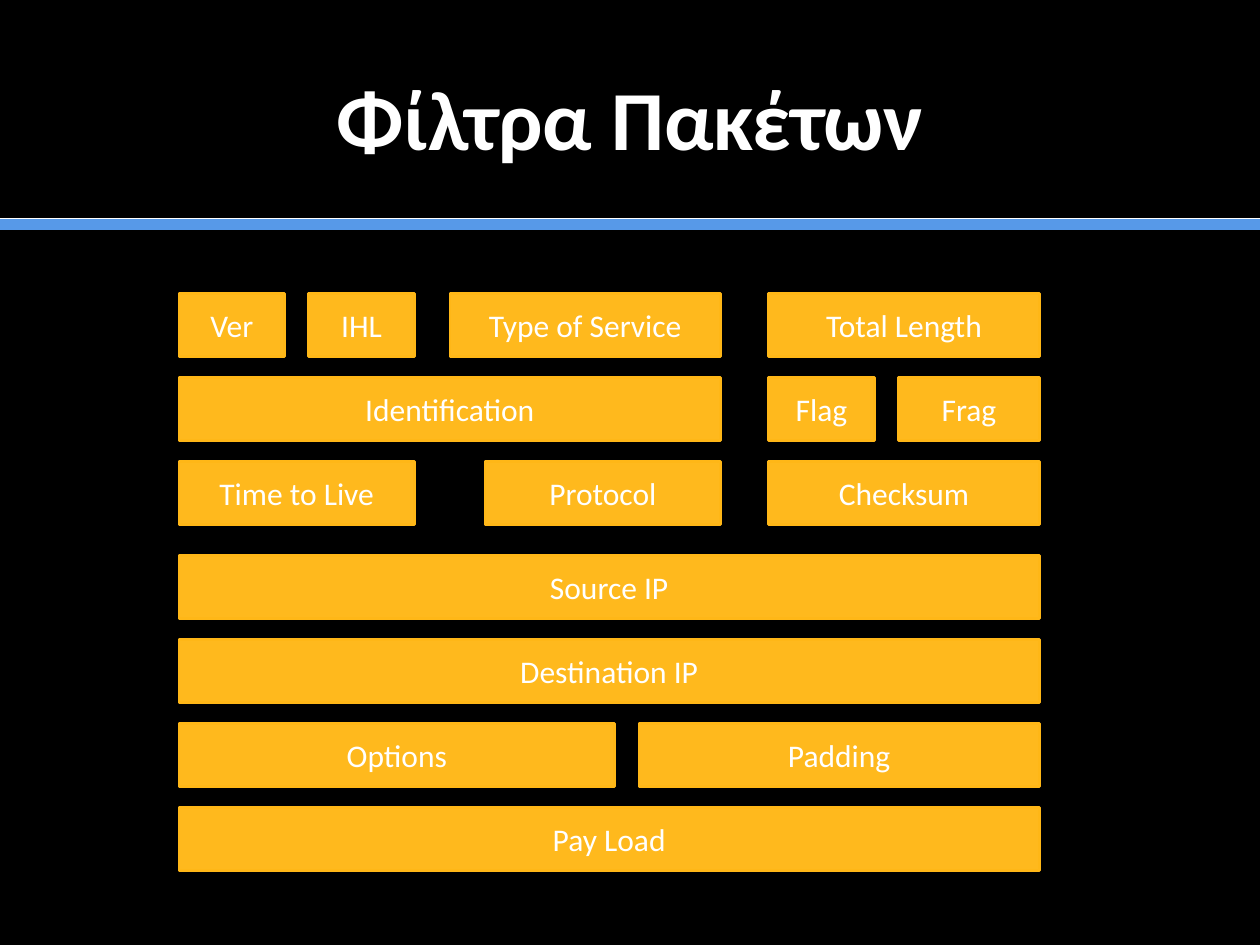
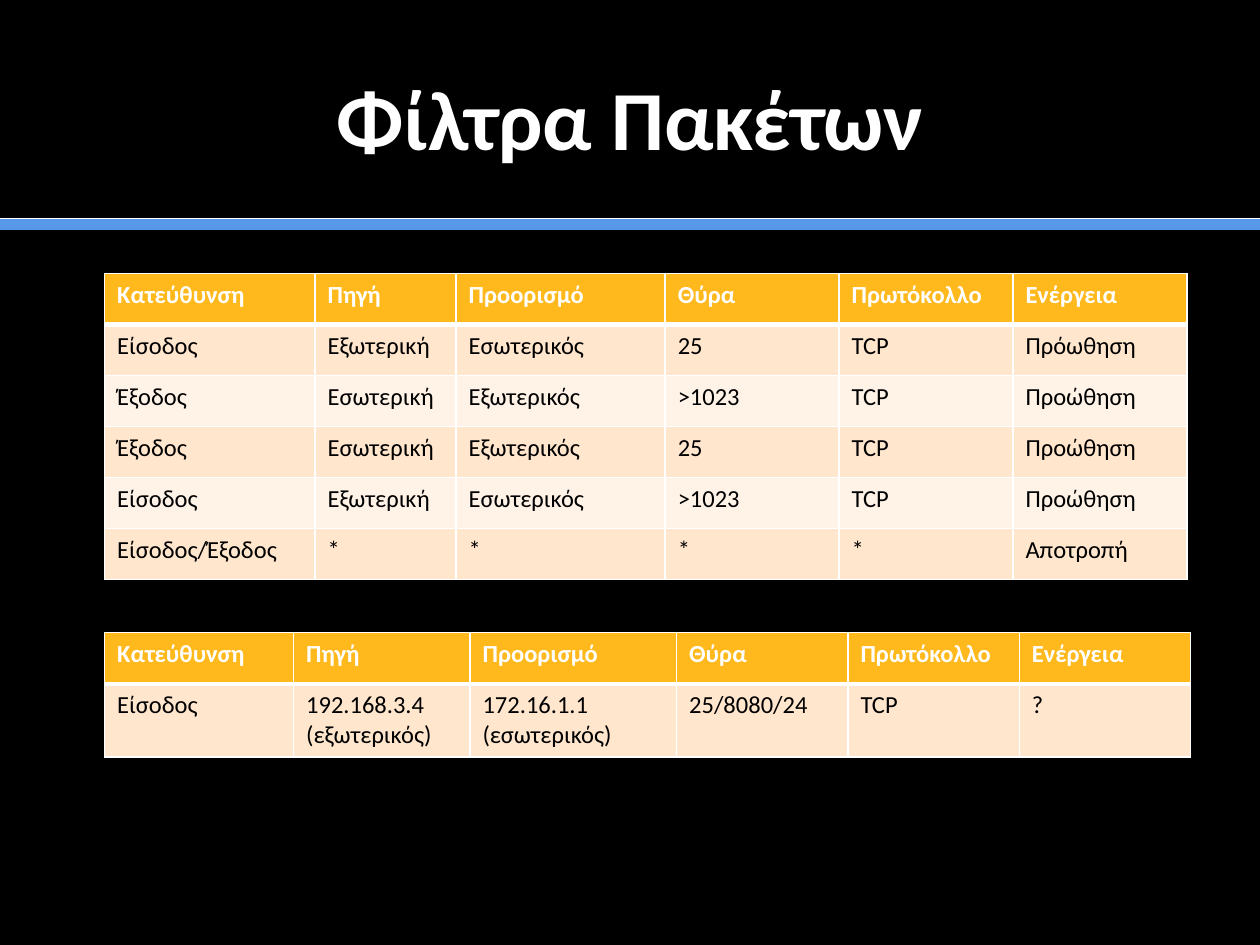
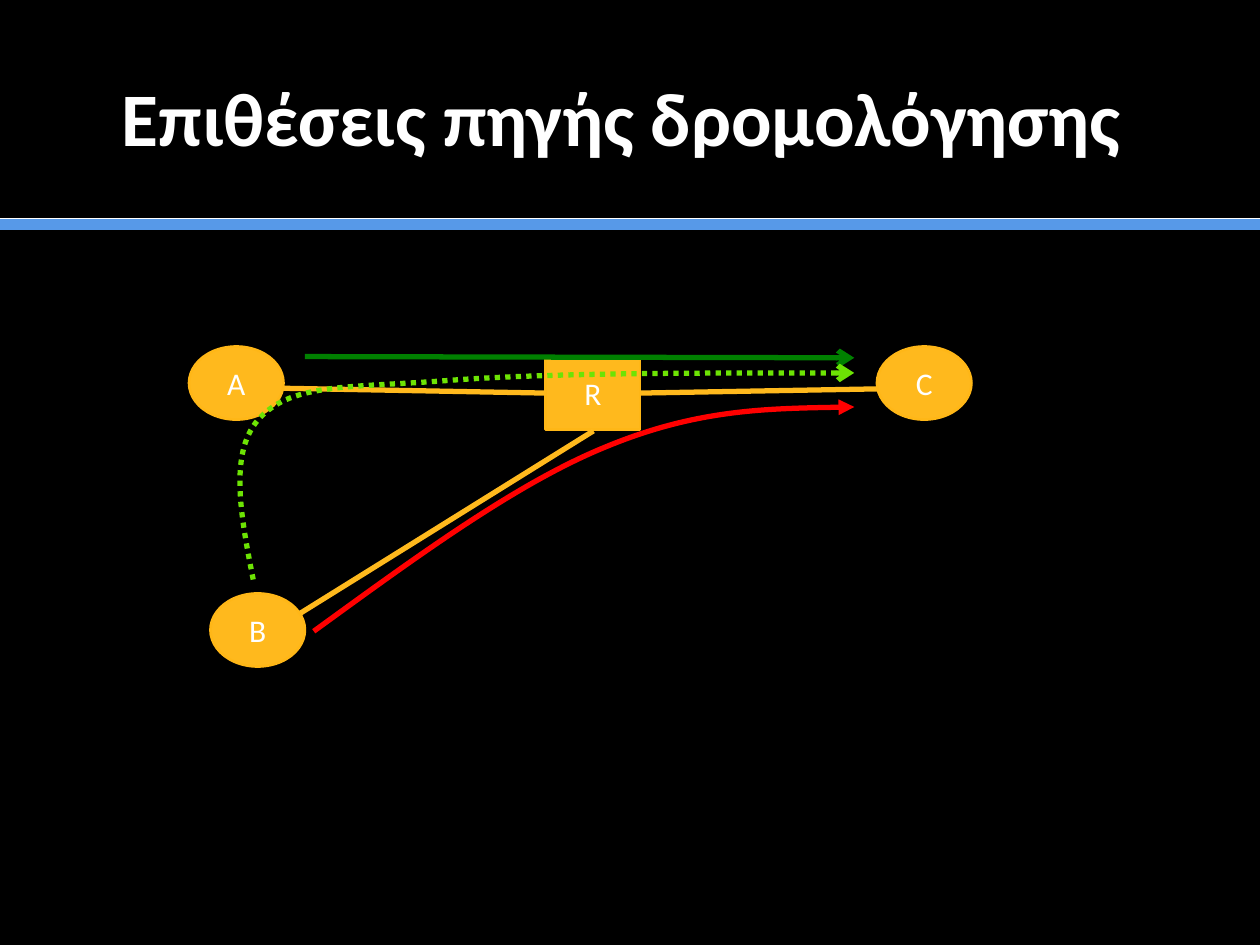
from dataclasses import dataclass

from pptx import Presentation
from pptx.dml.color import RGBColor
from pptx.enum.dml import MSO_LINE
from pptx.enum.shapes import MSO_CONNECTOR, MSO_SHAPE
from pptx.enum.text import MSO_ANCHOR, MSO_AUTO_SIZE, PP_ALIGN
from pptx.oxml.ns import qn
from pptx.oxml.xmlchemy import OxmlElement
from pptx.util import Inches, Pt


@dataclass(frozen=True)
class Theme:
    font: str = "Calibri"
    background: str = "000000"
    light: str = "FFFFFF"
    dark: str = "000000"
    band: str = "5799E8"
    accent: str = "FFB91D"
    outline: str = "FFB717"
    row_odd: str = "FFE6CD"
    row_even: str = "FFF3E8"
    direct_route: str = "008000"
    spoofed_route: str = "6DE304"
    attack_route: str = "FF0000"
    title_size: float = 48
    long_title_size: float = 43.2
    block_size: float = 18
    cell_size: float = 14
    route_width: float = 3


THEME = Theme()
TITLE_ONLY = 5

BLOCK_HEIGHT = 0.5
ROW_PITCH = 2 / 3
FIRST_ROW_TOP = 2.33
ADDRESS_GAP = 0.08
ADDRESS_ROW = 3

# Each header field: label, left edge, right edge.
HEADER_ROWS = [
    [("Ver", 1.42, 2.26), ("IHL", 2.45, 3.29),
     ("Type of Service", 3.57, 5.72), ("Total Length", 6.1, 8.25)],
    [("Identification", 1.42, 5.72), ("Flag", 6.1, 6.94), ("Frag", 7.13, 8.25)],
    [("Time to Live", 1.42, 3.29), ("Protocol", 3.85, 5.72), ("Checksum", 6.1, 8.25)],
    [("Source IP", 1.42, 8.25)],
    [("Destination IP", 1.42, 8.25)],
    [("Options", 1.42, 4.88), ("Padding", 5.07, 8.25)],
    [("Pay Load", 1.42, 8.25)],
]

RULE_HEADINGS = ["Κατεύθυνση", "Πηγή", "Προορισμό", "Θύρα", "Πρωτόκολλο", "Ενέργεια"]
FILTER_RULES = [
    ["Είσοδος", "Εξωτερική", "Εσωτερικός", "25", "TCP", "Πρόωθηση"],
    ["Έξοδος", "Εσωτερική", "Εξωτερικός", ">1023", "TCP", "Προώθηση"],
    ["Έξοδος", "Εσωτερική", "Εξωτερικός", "25", "TCP", "Προώθηση"],
    ["Είσοδος", "Εξωτερική", "Εσωτερικός", ">1023", "TCP", "Προώθηση"],
    ["Είσοδος/Έξοδος", "*", "*", "*", "*", "Αποτροπή"],
]
SAMPLE_PACKET = [
    ["Είσοδος", "192.168.3.4\n(εξωτερικός)", "172.16.1.1\n(εσωτερικός)",
     "25/8080/24", "TCP", "?"],
]


def rgb(color):
    return RGBColor.from_string(color)


def add_text(para, text, size, color, bold=False):
    span = para.add_run()
    span.text = text
    span.font.name = THEME.font
    span.font.size = Pt(size)
    span.font.bold = bold
    span.font.color.rgb = rgb(color)


def style_line(line, color, width):
    line.color.rgb = rgb(color)
    line.width = Pt(width)


def add_arrowhead(shape, kind):
    tail = OxmlElement("a:tailEnd")
    tail.set("type", kind)
    shape.line._get_or_add_ln().append(tail)


def add_line(page, start, end, color, width):
    ends = [Inches(value) for value in (*start, *end)]
    connector = page.shapes.add_connector(MSO_CONNECTOR.STRAIGHT, *ends)
    style_line(connector.line, color, width)
    connector.element.spPr.append(OxmlElement("a:effectLst"))
    return connector


def add_block(shapes, kind, label, left, top, width, height):
    block = shapes.add_shape(kind, Inches(left), Inches(top), Inches(width), Inches(height))
    block.shadow.inherit = False
    block.fill.solid()
    block.fill.fore_color.rgb = rgb(THEME.accent)
    style_line(block.line, THEME.outline, 1.5)
    block.text_frame.vertical_anchor = MSO_ANCHOR.MIDDLE
    para = block.text_frame.paragraphs[0]
    para.alignment = PP_ALIGN.CENTER
    add_text(para, label, THEME.block_size, THEME.light)


def add_curve(page, points, color, arrowhead, dash=None):
    """Draw cubic curves: a start point, then three points for each curve."""
    corners = [(Inches(x), Inches(y)) for x, y in points]
    builder = page.shapes.build_freeform(*corners[0])
    builder.add_line_segments(corners[1:], close=False)
    curve = builder.convert_to_shape()
    segments = list(curve.element.iter(qn("a:lnTo")))
    for first in range(0, len(segments), 3):
        bezier = OxmlElement("a:cubicBezTo")
        segments[first].addprevious(bezier)
        for segment in segments[first:first + 3]:
            bezier.append(segment[0])
            segment.getparent().remove(segment)
    curve.shadow.inherit = False
    curve.fill.background()
    style_line(curve.line, color, THEME.route_width)
    if dash:
        curve.line.dash_style = dash
    add_arrowhead(curve, arrowhead)


def add_border(cell, side, width):
    border = OxmlElement(f"a:ln{side}")
    border.set("w", str(Pt(width)))
    fill = OxmlElement("a:solidFill")
    color = OxmlElement("a:srgbClr")
    color.set("val", THEME.light)
    fill.append(color)
    border.append(fill)
    cell._tc.get_or_add_tcPr().append(border)


def fill_cell(cell, text, row):
    is_heading = row == 0
    widths = {"L": 1, "R": 1, "T": 3 if row == 1 else 1, "B": 3 if is_heading else 1}
    for side, width in widths.items():
        add_border(cell, side, width)
    body_fill = THEME.row_odd if row % 2 else THEME.row_even
    cell.fill.solid()
    cell.fill.fore_color.rgb = rgb(THEME.accent if is_heading else body_fill)
    frame = cell.text_frame
    for index, line in enumerate(text.split("\n")):
        para = frame.add_paragraph() if index else frame.paragraphs[0]
        add_text(para, line, THEME.cell_size,
                 THEME.light if is_heading else THEME.dark, is_heading)


def add_rule_table(page, top, column_widths, row_heights, rules):
    rows = [RULE_HEADINGS, *rules]
    table = page.shapes.add_table(
        len(rows), len(column_widths), Inches(0.83), Inches(top),
        Inches(sum(column_widths)), Inches(sum(row_heights))).table
    for column, width in zip(table.columns, column_widths):
        column.width = Inches(width)
    for row, height in zip(table.rows, row_heights):
        row.height = Inches(height)
    for row, texts in enumerate(rows):
        for column, text in enumerate(texts):
            fill_cell(table.cell(row, column), text, row)


def add_page(deck, title, size=THEME.title_size):
    page = deck.slides.add_slide(deck.slide_layouts[TITLE_ONLY])
    frame = page.shapes.title.text_frame
    frame.auto_size = MSO_AUTO_SIZE.NONE
    frame.vertical_anchor = MSO_ANCHOR.MIDDLE
    para = frame.paragraphs[0]
    para.alignment = PP_ALIGN.CENTER
    add_text(para, title, size, THEME.light, bold=True)
    return page


def set_up_layout(deck):
    background = deck.slide_master.background.fill
    background.solid()
    background.fore_color.rgb = rgb(THEME.background)
    title = deck.slide_layouts[TITLE_ONLY].placeholders[0]
    title.left, title.top = Inches(0.5), Inches(0.3)
    title.width, title.height = Inches(9), Inches(1.25)


def move_band_to_layout(page):
    """Draw the title band on a page, then hand it to the layout all pages share."""
    for height, color, width in ((1.78, THEME.band, 7), (1.73, THEME.light, 0.5)):
        band = add_line(page, (0, height), (10, height), color, width)
        page.slide_layout.shapes.element.append(band.element)


def add_packet_header(page):
    group = page.shapes.add_group_shape()
    for row, fields in enumerate(HEADER_ROWS):
        top = FIRST_ROW_TOP + row * ROW_PITCH + (ADDRESS_GAP if row >= ADDRESS_ROW else 0)
        for label, left, right in fields:
            add_block(group.shapes, MSO_SHAPE.RECTANGLE, label,
                      left, top, right - left, BLOCK_HEIGHT)


def add_filter_tables(page):
    add_rule_table(page, 2.17, [1.67, 1.12, 1.66, 1.38, 1.38, 1.38],
                   [0.405] * 6, FILTER_RULES)
    add_rule_table(page, 5.02, [1.5, 1.4, 1.64, 1.36, 1.36, 1.36],
                   [0.41, 0.58], SAMPLE_PACKET)


def add_routing_diagram(page):
    node_size = (0.75, 0.58)
    add_block(page.shapes, MSO_SHAPE.RECTANGLE, "R", 4.33, 2.83, *node_size)
    for start, end in (((4.71, 3.42), (2.17, 5)),
                       ((4.33, 3.12), (2.17, 3.08)),
                       ((5.08, 3.12), (7.33, 3.08))):
        add_line(page, start, end, THEME.accent, THEME.route_width)
    for label, left, top in (("A", 1.5, 2.75), ("B", 1.67, 4.71), ("C", 6.96, 2.75)):
        add_block(page.shapes, MSO_SHAPE.OVAL, label, left, top, *node_size)

    add_curve(page, [(2.49, 5.01), (3.29, 4.43), (4.09, 3.84), (4.8, 3.55),
                     (5.52, 3.25), (6.15, 3.24), (6.78, 3.23)],
              THEME.attack_route, "triangle")
    direct = add_line(page, (2.42, 2.83), (6.78, 2.84),
                      THEME.direct_route, THEME.route_width)
    add_arrowhead(direct, "arrow")
    add_curve(page, [(2.01, 4.6), (1.91, 4.09), (1.81, 3.57), (2.07, 3.31),
                     (2.33, 3.04), (2.78, 3.08), (3.56, 3.02),
                     (4.35, 2.96), (5.56, 2.96), (6.78, 2.96)],
              THEME.spoofed_route, "arrow", MSO_LINE.ROUND_DOT)


def main():
    deck = Presentation()
    deck.slide_width, deck.slide_height = Inches(10), Inches(7.5)
    set_up_layout(deck)

    header_page = add_page(deck, "Φίλτρα Πακέτων")
    move_band_to_layout(header_page)
    add_packet_header(header_page)
    add_filter_tables(add_page(deck, "Φίλτρα Πακέτων"))
    add_routing_diagram(add_page(deck, "Επιθέσεις πηγής δρομολόγησης ",
                                 THEME.long_title_size))
    deck.save("out.pptx")


if __name__ == "__main__":
    main()
